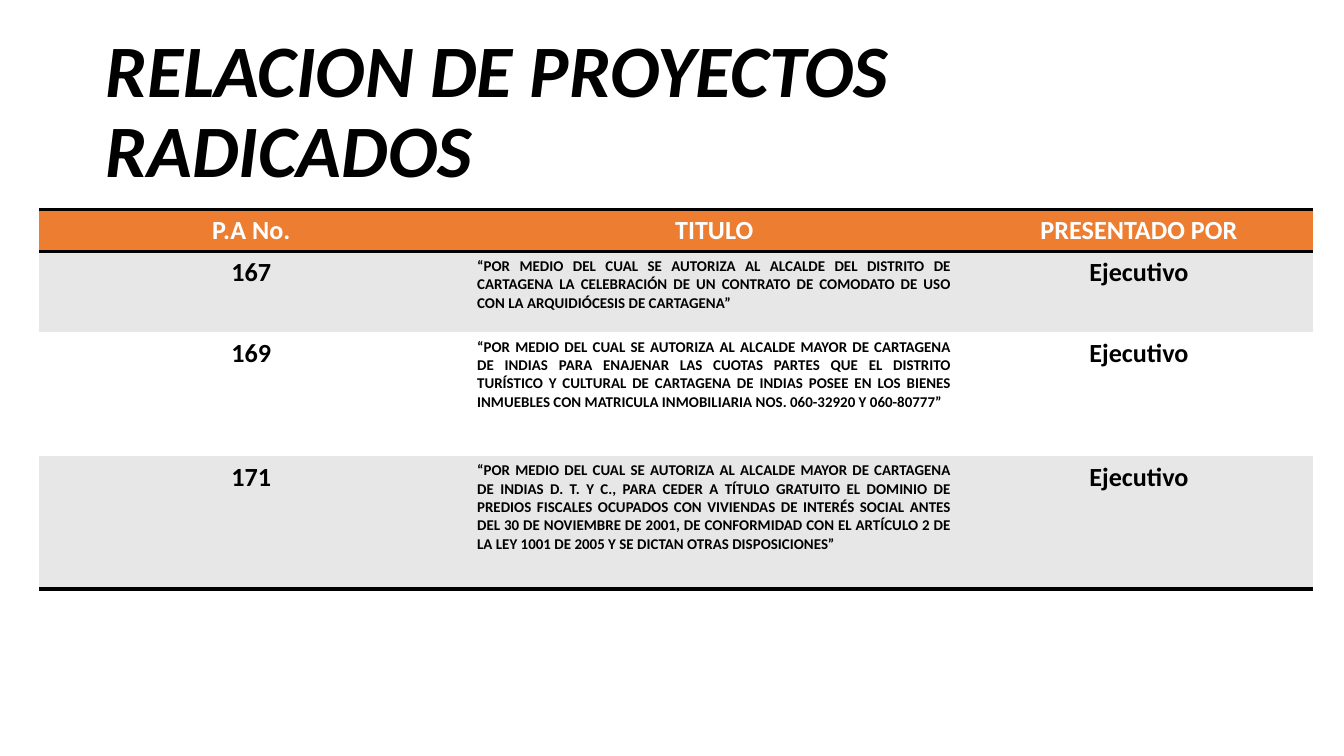
import pptx
import pptx.dml.color
import pptx.enum.text
import pptx.oxml
import pptx.oxml.ns
import pptx.util
from pptx.util import Inches

FONT = "Calibri"
BLACK, WHITE, ORANGE, GRAY = "000000", "FFFFFF", "ED7D31", "E7E7E7"
NO_STYLE = "{2D5ABB26-0587-4C30-8999-92F81FD0307C}"
ALIGN = pptx.enum.text.PP_ALIGN
SLIDE_WIDTH = 10
COLUMN_WIDTHS = [3.16, 3.73, 2.59]
ROW_HEIGHTS = [0.3, 0.6, 0.92, 0.99]
ROWS = [
    ["P.A No.", "TITULO", "PRESENTADO POR"],
    ["167",
     "“POR MEDIO DEL CUAL SE AUTORIZA AL ALCALDE DEL DISTRITO DE CARTAGENA "
     "LA CELEBRACIÓN DE UN CONTRATO DE COMODATO DE USO CON LA ARQUIDIÓCESIS "
     "DE CARTAGENA”",
     "Ejecutivo"],
    ["169",
     "“POR MEDIO DEL CUAL SE AUTORIZA AL ALCALDE MAYOR DE CARTAGENA DE INDIAS "
     "PARA ENAJENAR LAS CUOTAS PARTES QUE EL DISTRITO TURÍSTICO Y CULTURAL DE "
     "CARTAGENA DE INDIAS POSEE EN LOS BIENES INMUEBLES CON MATRICULA "
     "INMOBILIARIA NOS. 060-32920 Y 060-80777”",
     "Ejecutivo"],
    ["171",
     "“POR MEDIO DEL CUAL SE AUTORIZA AL ALCALDE MAYOR DE CARTAGENA DE INDIAS "
     "D. T. Y C., PARA CEDER A TÍTULO GRATUITO EL DOMINIO DE PREDIOS FISCALES "
     "OCUPADOS CON VIVIENDAS DE INTERÉS SOCIAL ANTES DEL 30 DE NOVIEMBRE DE "
     "2001, DE CONFORMIDAD CON EL ARTÍCULO 2 DE LA LEY 1001 DE 2005 Y SE DICTAN "
     "OTRAS DISPOSICIONES”",
     "Ejecutivo"],
]


def rgb(color):
    """Turn a hex string into a colour."""
    return pptx.dml.color.RGBColor.from_string(color)


def write(tf, text, size, color, align, italic=False):
    """Write one bold paragraph and return it."""
    tf.text = text
    p = tf.paragraphs[0]
    p.alignment = align
    for r in p.runs:
        r.font.name = FONT
        r.font.size = pptx.util.Pt(size)
        r.font.bold = True
        r.font.italic = italic
        r.font.color.rgb = rgb(color)
    return p


def add_title(s, text):
    """Add the slide title."""
    sp = s.shapes.add_textbox(Inches(0.69), Inches(0.3), Inches(8.62), Inches(1.09))
    tf = sp.text_frame
    tf.word_wrap = True
    tf.vertical_anchor = pptx.enum.text.MSO_ANCHOR.MIDDLE
    write(tf, text, 39.6, BLACK, ALIGN.LEFT, italic=True).line_spacing = 0.9


def add_border(cell, side):
    """Draw a black line on the side T or B of a cell."""
    cell._tc.get_or_add_tcPr().append(pptx.oxml.parse_xml(
        f'<a:ln{side} {pptx.oxml.ns.nsdecls("a")} w="{pptx.util.Pt(2)}">'
        f'<a:solidFill><a:srgbClr val="{BLACK}"/></a:solidFill></a:ln{side}>'))


def fill_cell(cell, text, row, col):
    """Write and style a cell by its place in the table."""
    header = row == 0
    is_description = col == 1 and not header
    cell.margin_left = cell.margin_right = Inches(0.1)
    cell.margin_top = cell.margin_bottom = Inches(0.04)
    write(cell.text_frame, text, 8 if is_description else 14,
          WHITE if header else BLACK,
          ALIGN.JUSTIFY if is_description else ALIGN.CENTER)
    if header:
        add_border(cell, "T")
    if header or row == len(ROWS) - 1:
        add_border(cell, "B")
    cell.fill.solid()
    cell.fill.fore_color.rgb = rgb(ORANGE if header else GRAY if row % 2 else WHITE)


def add_projects_table(s):
    """Add the table of filed projects."""
    table = s.shapes.add_table(
        len(ROWS), len(COLUMN_WIDTHS), Inches(0.29), Inches(1.56),
        Inches(sum(COLUMN_WIDTHS)), Inches(sum(ROW_HEIGHTS))).table
    table._tbl.tblPr.find(pptx.oxml.ns.qn("a:tableStyleId")).text = NO_STYLE
    for column, width in zip(table.columns, COLUMN_WIDTHS):
        column.width = Inches(width)
    for i, (height, texts) in enumerate(zip(ROW_HEIGHTS, ROWS)):
        table.rows[i].height = Inches(height)
        for j, text in enumerate(texts):
            fill_cell(table.cell(i, j), text, i, j)


def main():
    """Build and save the slide."""
    prs = pptx.Presentation()
    prs.slide_width = Inches(SLIDE_WIDTH)
    prs.slide_height = Inches(SLIDE_WIDTH * 9 / 16)
    s = prs.slides.add_slide(prs.slide_layouts[6])
    add_title(s, "RELACION DE PROYECTOS RADICADOS")
    add_projects_table(s)
    prs.save("out.pptx")


if __name__ == "__main__":
    main()
